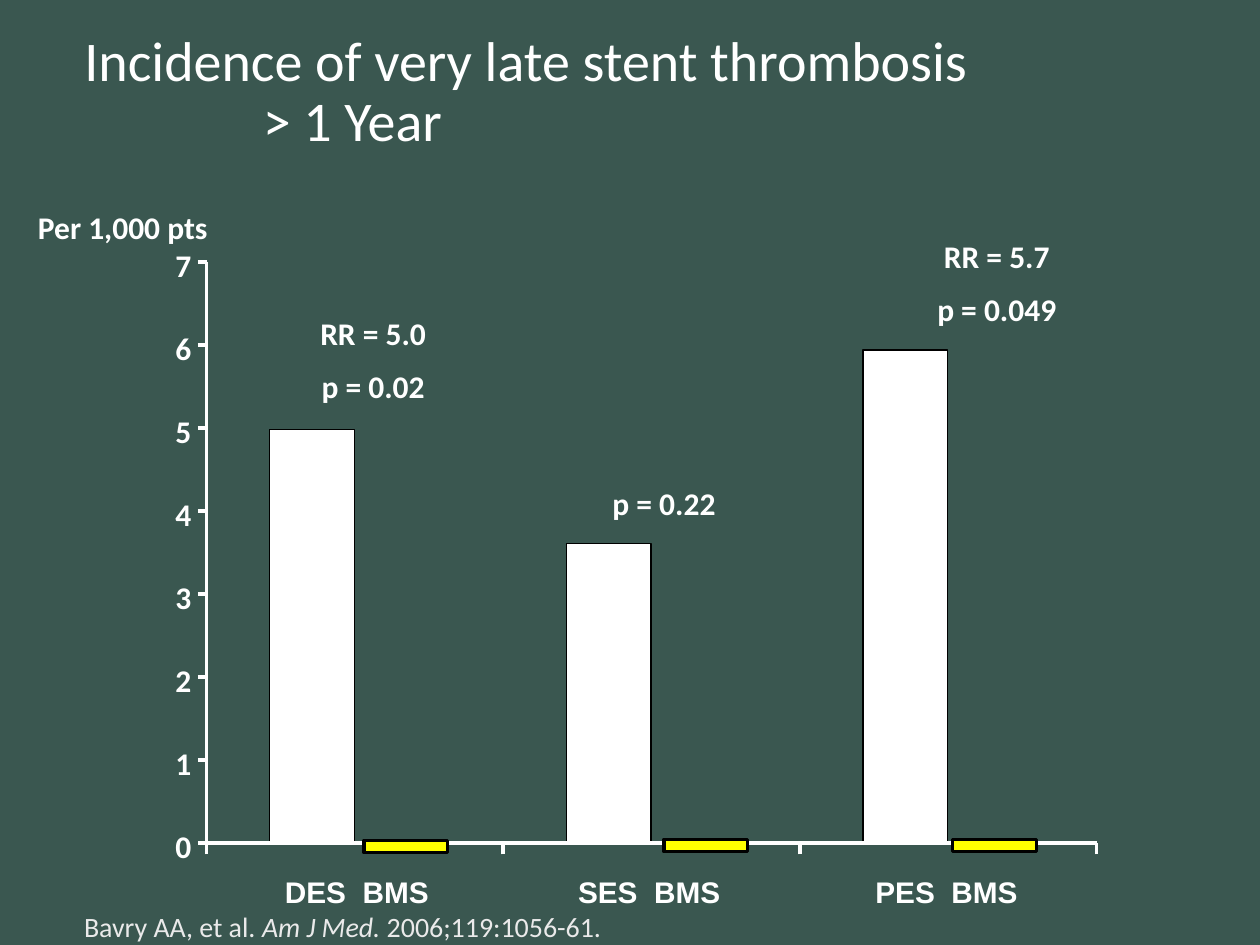
from lxml import etree
from pptx import Presentation
from pptx.dml.color import RGBColor
from pptx.enum.shapes import MSO_CONNECTOR, MSO_SHAPE
from pptx.enum.text import MSO_ANCHOR, PP_ALIGN
from pptx.oxml.ns import qn
from pptx.util import Pt

LINE = MSO_CONNECTOR.STRAIGHT
RECT = MSO_SHAPE.RECTANGLE
TOP, MIDDLE = MSO_ANCHOR.TOP, MSO_ANCHOR.MIDDLE
LEFT, CENTER = PP_ALIGN.LEFT, PP_ALIGN.CENTER

WHITE, BLACK, YELLOW = "FFFFFF", "000000", "FFFF00"
BOLD = {"name": "Calibri", "size": Pt(18), "bold": True}
HEAD = {"name": "Calibri", "size": Pt(32), "bold": False}
CITE = {"name": "Calibri", "size": Pt(16)}
GROUP = {"name": "Arial", "size": Pt(17), "bold": True}

AXIS_X, AXIS_Y = 118.1, 481.8
UNIT, SPAN, PEAK = 47.43, 169.5, 7
BAR_X, BAR_W = 154.1, 48.5
BARS = [
    ("DES  BMS", 4.98, 208.1, 480.2, 162.7),
    ("SES  BMS", 3.61, 379.4, 479.6, 329.8),
    ("PES  BMS", 5.94, 544.4, 479.6, 499.7),
]
NOTES = [
    (["RR = 5.7", "p = 0.049"], (516.3, 131.8, 106.6, 61.2)),
    (["RR = 5.0", "p = 0.02"], (156.3, 175.7, 113.8, 61.2)),
    (["p = 0.22"], (324, 272.9, 110.9, 28.8)),
    (["Per 1,000 pts"], (0, 115.2, 140.4, 28.8)),
]


def paint(color, tone):
    color.rgb = RGBColor.from_string(tone)


def apply(item, style):
    for key, value in style.items():
        setattr(item, key, value)


def place(shape, box):
    keys = ("left", "top", "width", "height")
    apply(shape, dict(zip(keys, map(Pt, box))))


def add_run(para, text, font, tone=WHITE):
    run = para.add_run()
    run.text = text
    apply(run.font, font)
    paint(run.font.color, tone)


def add_title(slide, lines):
    title = slide.shapes.title
    place(title, (41, 15.8, 662.4, 74.9))
    frame = title.text_frame
    apply(frame, {"vertical_anchor": MIDDLE, "word_wrap": True})
    for i, text in enumerate(lines):
        para = frame.paragraphs[0] if i == 0 else frame.add_paragraph()
        apply(para, {"alignment": LEFT, "line_spacing": 0.9, "space_before": Pt(0)})
        add_run(para, text, HEAD)
    para._p.get_or_add_pPr().set("marL", str(Pt(102)))


def add_text(slide, lines, box, font, tight=False):
    frame = slide.shapes.add_textbox(*map(Pt, box)).text_frame
    apply(frame, {"word_wrap": not tight, "vertical_anchor": TOP})
    if tight:
        sides = ("left", "top", "right", "bottom")
        apply(frame, {f"margin_{side}": 0 for side in sides})
    for i, text in enumerate(lines):
        para = frame.paragraphs[0] if i == 0 else frame.add_paragraph()
        apply(para, {"alignment": CENTER, "space_before": Pt(9 if i else 0)})
        add_run(para, text, font)


def add_source(slide, parts):
    box = map(Pt, (41, 516.2, 448.6, 26.6))
    frame = slide.shapes.add_textbox(*box).text_frame
    frame.word_wrap = True
    for text, slant in parts:
        add_run(frame.paragraphs[0], text, {**CITE, "italic": slant}, "EAEAEA")


def add_bar(slide, box, tone, width):
    bar = slide.shapes.add_shape(RECT, *map(Pt, box))
    bar.shadow.inherit = False
    bar.fill.solid()
    paint(bar.fill.fore_color, tone)
    paint(bar.line.color, BLACK)
    bar.line.width = Pt(width)


def add_line(slide, *ends):
    line = slide.shapes.add_connector(LINE, *map(Pt, ends))
    paint(line.line.color, WHITE)
    line.line.width = Pt(0)
    etree.SubElement(line._element.spPr, qn("a:effectLst"))


def add_axes(slide):
    add_line(slide, AXIS_X, AXIS_Y - PEAK * UNIT, AXIS_X, AXIS_Y)
    add_line(slide, AXIS_X, AXIS_Y, AXIS_X + len(BARS) * SPAN, AXIS_Y)
    for i in range(PEAK + 1):
        y = AXIS_Y - i * UNIT
        add_line(slide, AXIS_X - 5, y, AXIS_X, y)
        add_text(slide, [str(i)], (100.1, y - 9.4, 9.4, 22), BOLD, True)
    for i in range(len(BARS) + 1):
        x = AXIS_X + i * SPAN
        add_line(slide, x, AXIS_Y + 6.4, x, AXIS_Y)


def main():
    deck = Presentation()
    apply(deck, {"slide_width": Pt(720), "slide_height": Pt(540)})
    slide = deck.slides.add_slide(deck.slide_layouts[5])
    slide.background.fill.solid()
    paint(slide.background.fill.fore_color, "3A5750")

    add_title(slide, ["Incidence of very late stent thrombosis", "> 1 Year"])
    for lines, box in NOTES:
        add_text(slide, lines, box, BOLD)
    for i, (name, rate, *_) in enumerate(BARS):
        tall = rate * UNIT
        add_bar(slide, (BAR_X + i * SPAN, AXIS_Y - tall, BAR_W, tall), WHITE, 0.75)
    add_axes(slide)
    add_source(slide, [("Bavry AA, et al. ", False), ("Am J Med.", True),
                       (" 2006;119:1056-61.", False)])
    for name, rate, x, y, label in BARS:
        add_bar(slide, (x, y, 47.8, 7.2), YELLOW, 1.88)
        add_text(slide, [name], (label, 499, 82.4, 20.9), GROUP, True)
    deck.save("out.pptx")


if __name__ == "__main__":
    main()
